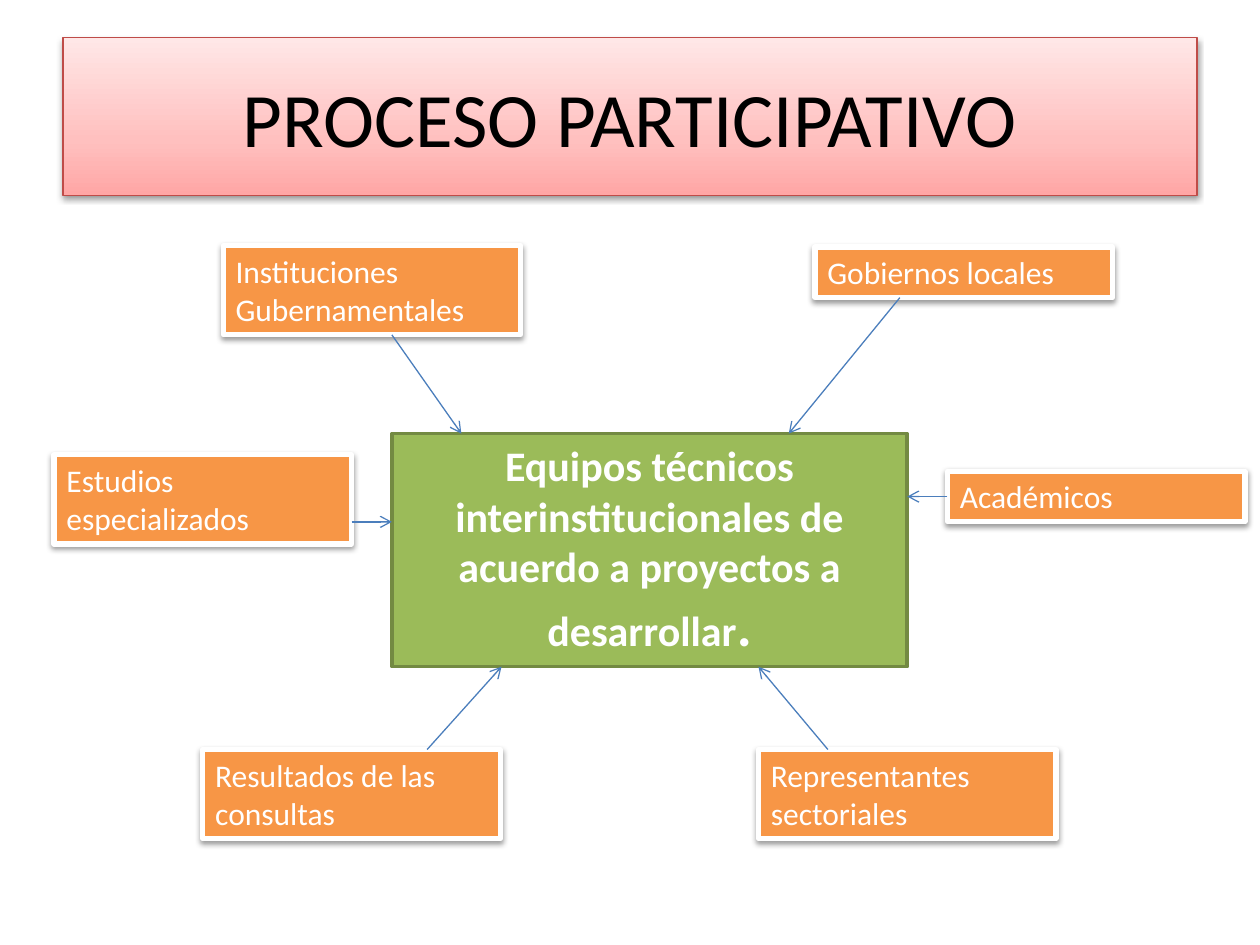
from copy import deepcopy
from typing import NamedTuple, Optional

from pptx import Presentation
from pptx.dml.color import RGBColor
from pptx.enum.shapes import MSO_CONNECTOR, MSO_SHAPE
from pptx.enum.text import MSO_ANCHOR, MSO_AUTO_SIZE, PP_ALIGN
from pptx.oxml.ns import qn
from pptx.util import Cm, Pt
from lxml.etree import SubElement

WHITE = RGBColor(0xFF, 0xFF, 0xFF)
BLACK = RGBColor(0x00, 0x00, 0x00)
ORANGE = RGBColor(0xF7, 0x96, 0x46)
GREEN = RGBColor(0x9B, 0xBB, 0x59)
OLIVE = RGBColor(0x73, 0x8A, 0x42)
RED = RGBColor(0xBF, 0x4C, 0x48)
BLUE = RGBColor(0x4B, 0x7E, 0xBC)
PINKS = (
    (0, RGBColor(0xFF, 0xA6, 0xA5)),
    (0.35, RGBColor(0xFF, 0xC0, 0xBF)),
    (1, RGBColor(0xFF, 0xE7, 0xE7)),
)
WIDE, LOW, HIGH = 6, 1.02, 1.8


class Source(NamedTuple):
    """A group that feeds the team; lengths in cm."""
    text: str
    left: float
    top: float
    high: float
    start: tuple[float, float]
    end: tuple[float, float]
    side: Optional[int] = None


SOURCES = (
    Source("Instituciones Gubernamentales", 4.5, 4.95, HIGH, (7.9, 6.75), (9.3, 8.74)),
    Source("Gobiernos locales", 16.43, 4.98, LOW, (18.14, 6), (15.9, 8.74)),
    Source("Resultados de las consultas", 4.09, 15.11, HIGH, (8.61, 15.11), (10.11, 13.44)),
    Source("Estudios especializados", 1.09, 9.17, HIGH, (7.09, 10.52), (7.9, 10.52)),
    Source("Representantes sectoriales", 15.29, 15.11, HIGH, (16.69, 15.11), (15.29, 13.44)),
    Source("Académicos", 19.1, 9.5, LOW, (19.1, 10.01), (18.29, 10.01), 1),
)


def add_box(slide, left: float, top: float, wide: float, high: float,
            line: RGBColor, weight: float, fill: Optional[RGBColor] = None):
    box = slide.shapes.add_shape(MSO_SHAPE.RECTANGLE, Cm(left), Cm(top), Cm(wide), Cm(high))
    box.shadow.inherit = False
    if fill is not None:
        box.fill.solid()
        box.fill.fore_color.rgb = fill
    box.line.color.rgb = line
    box.line.width = Pt(weight)
    return box


def add_shade(box) -> None:
    """Put a soft shadow below the box."""
    effects = box.element.spPr.find(qn("a:effectLst"))
    shade = SubElement(effects, qn("a:outerShdw"), blurRad="40000", dist="20000",
                       dir="5400000", rotWithShape="0")
    color = SubElement(shade, qn("a:srgbClr"), val="000000")
    SubElement(color, qn("a:alpha"), val="38000")


def fill_fade(box) -> None:
    """Fill the box with the pinks, from bottom to top."""
    box.fill.gradient()
    box.fill.gradient_angle = 90
    stops = box.element.spPr.find(qn("a:gradFill")).find(qn("a:gsLst"))
    stops.append(deepcopy(stops[0]))
    for stop, (place, color) in zip(box.fill.gradient_stops, PINKS):
        stop.position = place
        stop.color.rgb = color


def add_text(box, *parts: tuple[str, float], color: RGBColor = WHITE, bold: bool = False,
             align: PP_ALIGN = PP_ALIGN.LEFT, anchor: MSO_ANCHOR = MSO_ANCHOR.TOP,
             grow: bool = True) -> None:
    """Write parts of text, each with its own size, as one paragraph."""
    frame = box.text_frame
    frame.word_wrap = True
    frame.vertical_anchor = anchor
    if grow:
        frame.auto_size = MSO_AUTO_SIZE.SHAPE_TO_FIT_TEXT
    para = frame.paragraphs[0]
    para.alignment = align
    for text, size in parts:
        run = para.add_run()
        run.text = text
        run.font.name = "Calibri"
        run.font.size = Pt(size)
        run.font.bold = bold
        run.font.color.rgb = color


def add_arrow(slide, source: Source, box) -> None:
    points = [Cm(value) for value in source.start + source.end]
    arrow = slide.shapes.add_connector(MSO_CONNECTOR.STRAIGHT, *points)
    if source.side is not None:
        arrow.begin_connect(box, source.side)
    arrow.line.color.rgb = BLUE
    arrow.line.width = Pt(0.75)
    props = arrow.element.spPr
    SubElement(props.find(qn("a:ln")), qn("a:tailEnd"), type="arrow")
    SubElement(props, qn("a:effectLst"))


def main() -> None:
    deck = Presentation()
    deck.slide_width, deck.slide_height = Cm(25.4), Cm(19.05)
    slide = deck.slides.add_slide(deck.slide_layouts[6])

    title = add_box(slide, 1.27, 0.76, 22.86, 3.18, RED, 0.75)
    fill_fade(title)
    add_shade(title)
    add_text(title, ("PROCESO PARTICIPATIVO", 44), color=BLACK,
             align=PP_ALIGN.CENTER, anchor=MSO_ANCHOR.MIDDLE, grow=False)

    team = add_box(slide, 7.9, 8.74, 10.39, 4.7, OLIVE, 2, GREEN)
    add_text(team, ("Equipos técnicos interinstitucionales de acuerdo a proyectos a desarrollar", 24),
             (".", 32), bold=True, align=PP_ALIGN.CENTER)

    boxes = []
    for source in SOURCES:
        box = add_box(slide, source.left, source.top, WIDE, source.high, WHITE, 3, ORANGE)
        add_shade(box)
        add_text(box, (source.text, 18))
        boxes.append(box)
    for source, box in zip(SOURCES, boxes):
        add_arrow(slide, source, box)

    deck.save("out.pptx")


if __name__ == "__main__":
    main()
